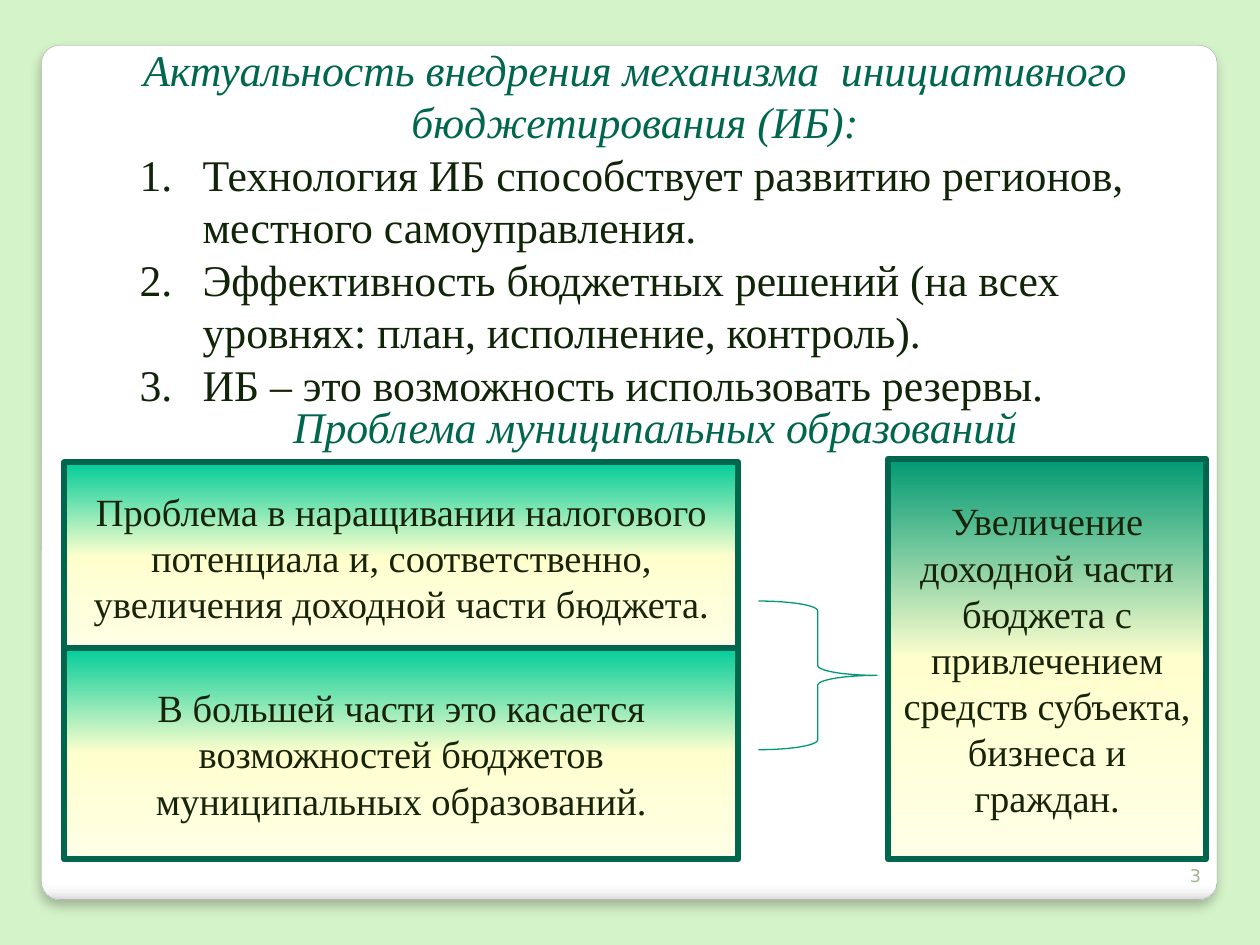
from lxml import etree
from pptx import Presentation
from pptx.dml.color import RGBColor
from pptx.enum.shapes import MSO_SHAPE as Preset
from pptx.enum.text import MSO_ANCHOR as Anchor, PP_ALIGN as Align
from pptx.oxml import parse_xml
from pptx.oxml.ns import nsdecls, qn
from pptx.util import Inches, Pt

COLORS = {
    "background": "D5F3C9", "panel_line": "A4A4A4", "heading": "00664D",
    "list": "102408", "card_text": "182409", "brace": "009973",
    "number": "9EB495",
}
SERIF = "Times New Roman"

HEADING = "Актуальность внедрения механизма  инициативного бюджетирования (ИБ):"
REASONS = [
    "Технология ИБ способствует развитию регионов, местного самоуправления.",
    "Эффективность бюджетных решений (на всех уровнях: план, исполнение, контроль).",
    "ИБ – это возможность использовать резервы.",
]
SUBHEADING = "Проблема муниципальных образований"
PANEL_STOPS = [(0, "FFFFFF"), (98, "FFFFFF"), (99, "F7F7F7"), (100, "DADADA")]
CARDS = [
    ("Проблема в наращивании налогового потенциала и, соответственно, "
     "увеличения доходной части бюджета.", (0.51, 3.67, 5.35, 1.5), "00CC99"),
    ("В большей части это касается возможностей бюджетов муниципальных "
     "образований.", (0.51, 5.14, 5.35, 1.68), "00CC99"),
    ("Увеличение доходной части бюджета с привлечением средств субъекта, "
     "бизнеса и граждан.", (7.05, 3.64, 2.52, 3.18), "009973"),
]


def color(name):
    return RGBColor.from_string(COLORS[name])


def add_shape(preset, box, line, width):
    shape = slide.shapes.add_shape(preset, *map(Inches, box))
    shape.shadow.inherit = False
    shape.line.color.rgb = color(line)
    shape.line.width = Pt(width)
    return shape


def fill_gradient(shape, stops):
    shape.fill.gradient()
    shape.fill.gradient_angle = 270
    stop_list = shape._element.spPr.find(qn("a:gradFill")).find(qn("a:gsLst"))
    for stop in list(stop_list):
        stop_list.remove(stop)
    for position, value in stops:
        stop = etree.SubElement(stop_list, qn("a:gs"), pos=str(position * 1000))
        etree.SubElement(stop, qn("a:srgbClr"), val=value)


def add_text_box(box, anchor=Anchor.TOP):
    frame = slide.shapes.add_textbox(*map(Inches, box)).text_frame
    frame.word_wrap = True
    frame.vertical_anchor = anchor
    return frame


def style(paragraph, text, size, text_color, align=Align.CENTER, italic=False,
          name=SERIF):
    paragraph.text = text
    paragraph.alignment = align
    font = paragraph.font
    font.name, font.size, font.italic = name, Pt(size), italic
    font.color.rgb = color(text_color)


def number(paragraph):
    properties = paragraph._p.get_or_add_pPr()
    properties.set("marL", str(Inches(1)))
    properties.set("indent", str(Inches(-0.5)))
    etree.SubElement(properties, qn("a:buFont"), typeface="+mj-lt")
    etree.SubElement(properties, qn("a:buAutoNum"), type="arabicPeriod")


presentation = Presentation()
presentation.slide_width, presentation.slide_height = Inches(10), Inches(7.5)
slide = presentation.slides.add_slide(presentation.slide_layouts[6])
slide.background.fill.solid()
slide.background.fill.fore_color.rgb = color("background")

panel = add_shape(Preset.ROUNDED_RECTANGLE, (0.33, 0.36, 9.33, 6.78), "panel_line", 0.16)
panel.adjustments[0] = 0.021
fill_gradient(panel, PANEL_STOPS)
panel._element.spPr.find(qn("a:effectLst")).append(parse_xml(
    f'<a:outerShdw {nsdecls("a")} blurRad="{Pt(6)}" dist="{Pt(4)}" dir="5400000">'
    '<a:srgbClr val="000000"><a:alpha val="25000"/></a:srgbClr></a:outerShdw>'))

page_number = add_text_box((9.13, 6.68, 0.5, 0.4), Anchor.BOTTOM)
style(page_number.paragraphs[0], "3", 10, "number", Align.RIGHT, name="DejaVu Sans")

subheading = add_text_box((0.83, 3.12, 8.74, 0.94))
style(subheading.paragraphs[0], SUBHEADING, 25, "heading", italic=True)

for text, box, top_color in CARDS:
    card = add_shape(Preset.RECTANGLE, box, "heading", 3.35)
    fill_gradient(card, [(0, top_color), (50, "FFFFCE"), (100, "FFFFE7")])
    card.text_frame.word_wrap = True
    card.text_frame.vertical_anchor = Anchor.MIDDLE
    style(card.text_frame.paragraphs[0], text, 22, "card_text")

brace = add_shape(Preset.RIGHT_BRACE, (6.02, 4.77, 0.94, 1.18), "brace", 0.75)
brace.fill.background()

reasons = add_text_box((0.51, 0.29, 9.06, 3.47))
style(reasons.paragraphs[0], HEADING, 25, "heading", italic=True)
for reason in REASONS:
    paragraph = reasons.add_paragraph()
    number(paragraph)
    style(paragraph, reason, 25, "list", Align.LEFT)

presentation.save("out.pptx")
